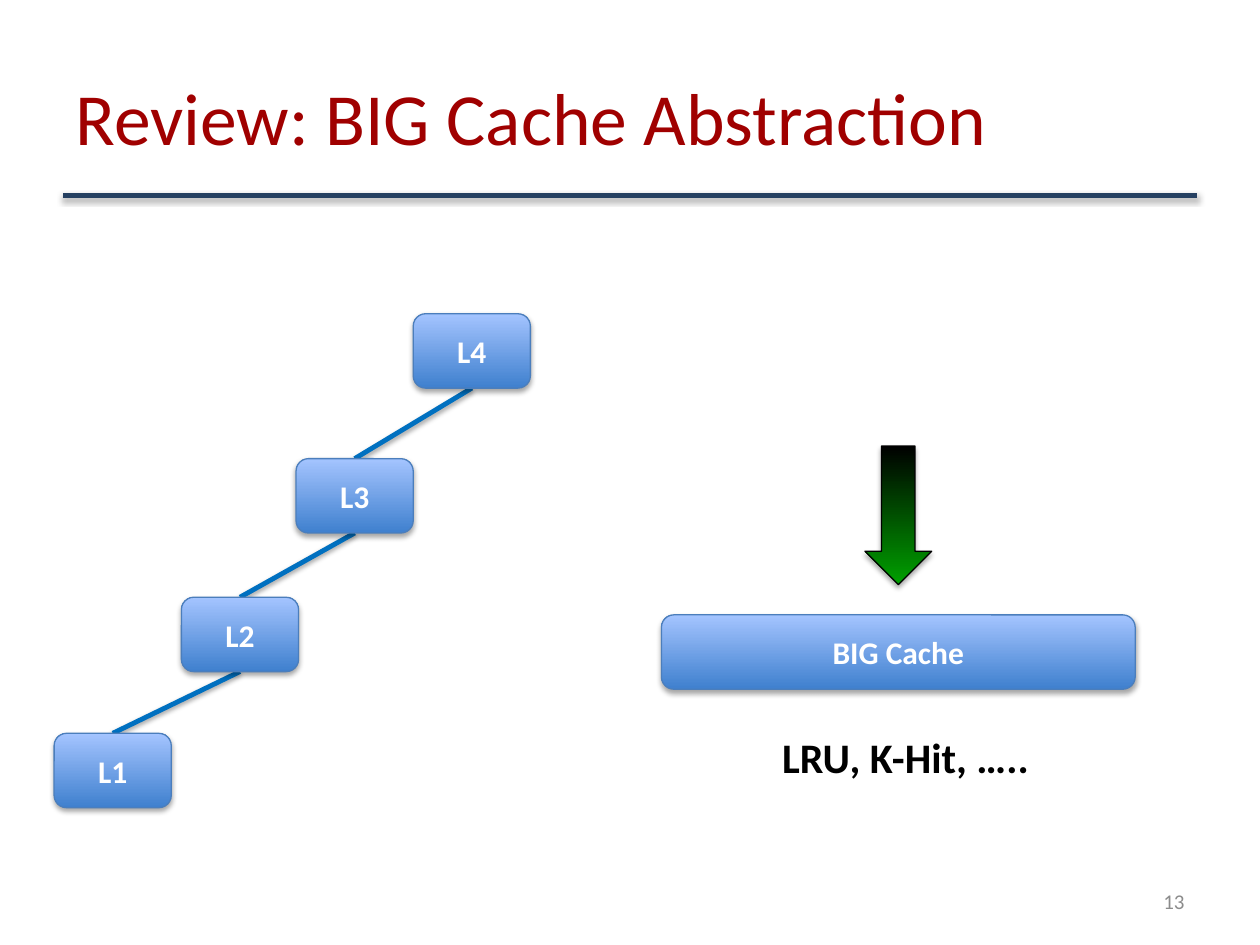
from lxml import etree
from pptx import Presentation
from pptx.dml.color import RGBColor
from pptx.enum.shapes import MSO_CONNECTOR, MSO_SHAPE
from pptx.enum.text import MSO_ANCHOR, PP_ALIGN
from pptx.oxml.ns import qn
from pptx.util import Inches, Pt

STRAIGHT = MSO_CONNECTOR.STRAIGHT
ROUNDED, DOWN_ARROW = MSO_SHAPE.ROUNDED_RECTANGLE, MSO_SHAPE.DOWN_ARROW
MIDDLE, TOP = MSO_ANCHOR.MIDDLE, MSO_ANCHOR.TOP
LEFT, CENTER, RIGHT = PP_ALIGN.LEFT, PP_ALIGN.CENTER, PP_ALIGN.RIGHT
TOP_SIDE, BOTTOM_SIDE = 0, 2
BOX_W, BOX_H = 0.93, 0.59
BLUES = ("3F80CE", "A4C4FF")
GREENS = ("00A000", "000000")


def color(value):
    return RGBColor.from_string(value)


def inches(*values):
    return [Inches(v) for v in values]


def add_shadow(sp, alpha, dist):
    effects = etree.SubElement(sp._element.spPr, qn("a:effectLst"))
    shadow = etree.SubElement(effects, qn("a:outerShdw"), blurRad=str(Pt(3.1)),
                              dist=str(Pt(dist)), dir="5400000", rotWithShape="0")
    black = etree.SubElement(shadow, qn("a:srgbClr"), val="000000")
    etree.SubElement(black, qn("a:alpha"), val=str(alpha * 1000))


def set_text(sp, text, size, hex_color, bold=False, align=LEFT, anchor=MIDDLE):
    tf = sp.text_frame
    tf.word_wrap = True
    tf.vertical_anchor = anchor
    p = tf.paragraphs[0]
    p.alignment = align
    r = p.add_run()
    r.text = text
    font = {"name": "Calibri", "size": Pt(size), "bold": bold}
    for name, value in font.items():
        setattr(r.font, name, value)
    r.font.color.rgb = color(hex_color)


def add_text(s, box, text, *args, **kwargs):
    set_text(s.shapes.add_textbox(*inches(*box)), text, *args, **kwargs)


def add_line(s, start, end, hex_color, width):
    line = s.shapes.add_connector(STRAIGHT, *inches(*start, *end))
    line.line.color.rgb = color(hex_color)
    line.line.width = Pt(width)
    add_shadow(line, 38, 1.6)
    return line


def add_gradient_shape(s, kind, box, colors, outline):
    sp = s.shapes.add_shape(kind, *inches(*box))
    sp.fill.gradient()
    sp.fill.gradient_angle = 90
    for stop, value in zip(sp.fill.gradient_stops, colors):
        stop.color.rgb = color(value)
    sp.line.color.rgb = color(outline)
    sp.line.width = Pt(0.75)
    add_shadow(sp, 35, 1.8)
    return sp


def add_cache(s, box, label):
    sp = add_gradient_shape(s, ROUNDED, box, BLUES, "4B7EBC")
    set_text(sp, label, 18, "FFFFFF", bold=True, align=CENTER)
    return sp


def add_header(s, box, text):
    left, top, width, height = box
    title = s.shapes.title
    title.left, title.top, title.width, title.height = inches(*box)
    set_text(title, text, 42, "A00000")
    bottom = top + height
    add_line(s, (left, bottom), (left + width, bottom), "254061", 3)


def add_hierarchy(s, left, top):
    offsets = [(0, 3.33), (1.01, 2.25), (1.92, 1.15), (2.85, 0)]
    levels = [add_cache(s, (left + x, top + y, BOX_W, BOX_H), f"L{i}")
              for i, (x, y) in enumerate(offsets, 1)]
    for lower, upper in zip(levels, levels[1:]):
        line = add_line(s, (0, 0), (1, 1), "0070C0", 2.75)
        line.begin_connect(lower, TOP_SIDE)
        line.end_connect(upper, BOTTOM_SIDE)
        levels[0]._element.addprevious(line._element)


def add_big_cache(s, left, top, width):
    arrow_w = 0.53
    arrow_left = left + (width - arrow_w) / 2
    add_cache(s, (left, top + 1.34, width, BOX_H), "BIG Cache")
    add_gradient_shape(s, DOWN_ARROW, (arrow_left, top, arrow_w, 1.1), GREENS, "000000")
    add_text(s, (left + 0.86, top + 2.22, 2.36, 0.5), "LRU, K-Hit, …..",
             24, "000000", bold=True, anchor=TOP)


def main():
    prs = Presentation()
    prs.slide_width, prs.slide_height = inches(10, 7.5)
    s = prs.slides.add_slide(prs.slide_layouts[5])
    add_header(s, (0.5, 0.3, 9, 1.25), "Review: BIG Cache Abstraction")
    add_hierarchy(s, 0.43, 2.49)
    add_big_cache(s, 5.25, 3.54, 3.76)
    add_text(s, (7.17, 6.95, 2.33, 0.4), "13", 12, "8C8C8C", align=RIGHT)
    prs.save("out.pptx")


if __name__ == "__main__":
    main()
